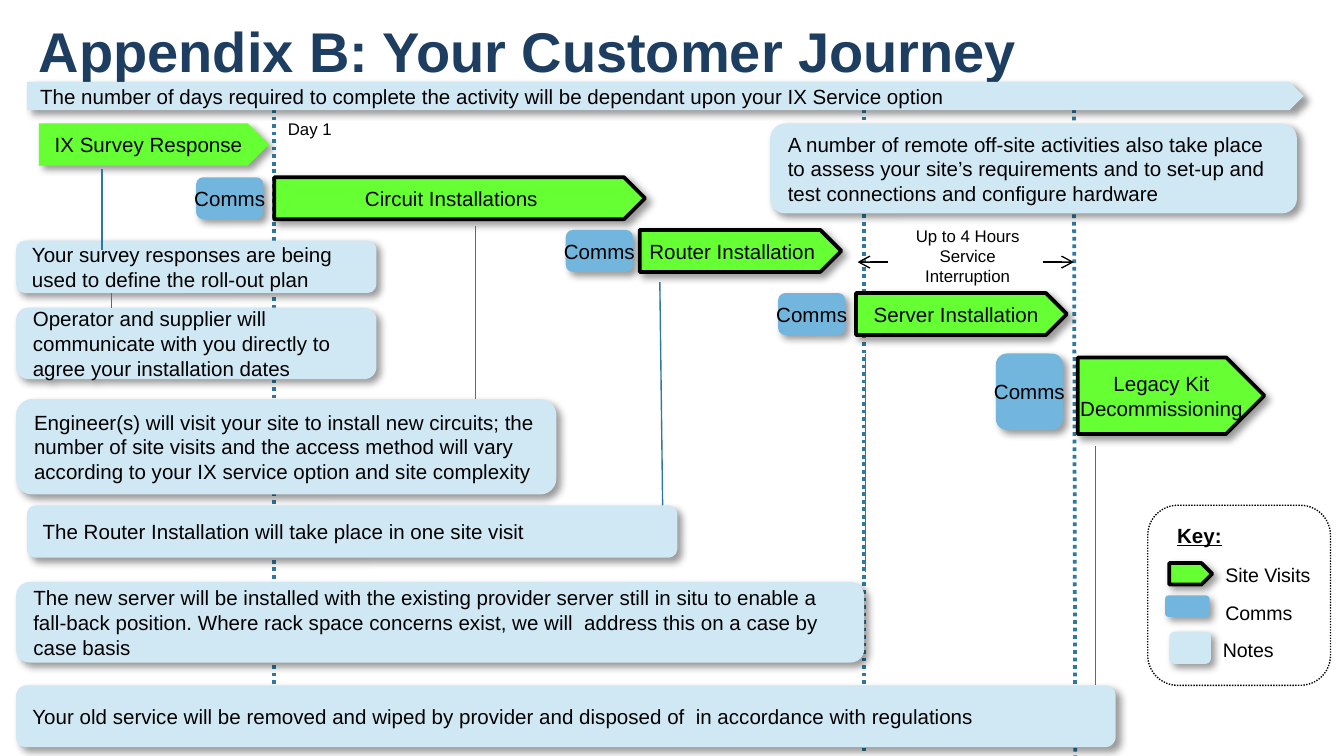
from lxml.etree import SubElement
from pptx import Presentation
from pptx.dml.color import RGBColor
from pptx.enum.dml import MSO_LINE
from pptx.enum.shapes import MSO_CONNECTOR, MSO_SHAPE
from pptx.enum.text import MSO_ANCHOR, MSO_AUTO_SIZE, PP_ALIGN
from pptx.oxml.ns import qn
from pptx.util import Pt

FONT = "Arial"
COLORS = {
    "title": "1D3E61",
    "text": "000000",
    "outline": "000000",
    "shadow": "000000",
    "visit": "66FF33",
    "comms": "73B6DD",
    "note": "D0E7F4",
    "link": "2F799E",
}
PLATE, ROUND = MSO_SHAPE.PENTAGON, MSO_SHAPE.ROUNDED_RECTANGLE
SLIDE_H = 405
BANNER_BOTTOM = 58.5

# (text, left, top, width, height, comms left, comms top)
VISITS = [
    ("Circuit Installations ", 146.9, 95, 198.7, 22.5, 105.1, 95),
    ("Router Installation ", 342.7, 123.2, 108, 22.5, 303.1, 123.2),
    ("Server Installation", 458.6, 157, 113, 22.5, 416.9, 157),
    ("Legacy Kit\nDecommissioning", 577.4, 191.5, 100, 41, 533.5, 189.4),
]
# (text, left, top, width, height)
NOTES = [
    ("Your survey responses are being used to define the roll-out plan",
     8.64, 128.9, 193, 28.1),
    ("Operator and supplier will communicate with you directly to agree your "
     "installation dates", 8.64, 164.9, 193, 38.2),
    ("Engineer(s) will visit your site to install new circuits; the number of "
     "site visits and the access method will vary according to your IX service "
     "option and site complexity", 8.64, 213.8, 289.4, 51.1),
    ("The Router Installation will take place in one site visit",
     14.4, 270.7, 348.5, 28.1),
    ("The new server will be installed with the existing provider server still "
     "in situ to enable a fall-back position. Where rack space concerns exist, "
     "we will  address this on a case by case basis", 8.64, 311.8, 454.3, 43.2),
    ("Your old service will be removed and wiped by provider and disposed of  in "
     "accordance with regulations", 8.64, 367.2, 589, 33.1),
    ("A number of remote off-site activities also take place to assess your "
     "site’s requirements and to set-up and test connections and configure "
     "hardware", 412.6, 66.2, 282.2, 48.2),
]
# (x1, y1, x2, y2)
MILESTONES = [
    (146.9, BANNER_BOTTOM, 146.9, 400.3),
    (463, BANNER_BOTTOM, 463, 402.5),
    (575.3, BANNER_BOTTOM, 576, SLIDE_H),
]
LINKS = [
    (54.7, 90.7, 54.7, 133.9),
    (59.8, 157, 59.8, 164.9),
    (254.9, 121, 254.9, 213.8),
    (353.5, 151.2, 355, 270.7),
    (463.7, 189.4, 463.7, 306.7),
    (586.8, 239, 586.8, 367.2),
]
# (text, label left, label top, label width, preset, fill, outlined, swatch box)
KEY = [
    ("Site Visits", 649.4, 298.1, 63.4, PLATE, "visit", True, (626.4, 301.7, 23, 11.5)),
    ("Comms", 649.4, 318.2, 51.1, ROUND, "comms", False, (624.2, 319, 23.8, 11.5)),
    ("Notes", 648, 338.4, 42.5, ROUND, "note", False, (626.4, 338.4, 22.3, 17.3)),
]


def rgb(name):
    return RGBColor.from_string(COLORS[name])


def write(tf, text, size=11, color="text", bold=False, underline=False,
          align=PP_ALIGN.LEFT):
    for i, line in enumerate(text.split("\n")):
        p = tf.paragraphs[0] if i == 0 else tf.add_paragraph()
        p.alignment = align
        r = p.add_run()
        r.text = line
        r.font.name, r.font.size = FONT, Pt(size)
        r.font.bold, r.font.underline = bold, underline
        r.font.color.rgb = rgb(color)


def add_shadow(sp):
    sp.shadow.inherit = False
    effects = sp._element.spPr.find(qn("a:effectLst"))
    outer = SubElement(effects, qn("a:outerShdw"), blurRad=str(Pt(4)),
                       dist=str(Pt(3)), dir=str(45 * 60000), algn="tl",
                       rotWithShape="0")
    color = SubElement(outer, qn("a:srgbClr"), val=COLORS["shadow"])
    SubElement(color, qn("a:alpha"), val="40000")


def add_block(s, preset, box, fill, text="", outlined=False, wrap=False,
              align=PP_ALIGN.CENTER):
    sp = s.shapes.add_shape(preset, *map(Pt, box))
    sp.fill.solid()
    sp.fill.fore_color.rgb = rgb(fill)
    if outlined:
        sp.line.color.rgb = rgb("outline")
        sp.line.width = Pt(2)
    else:
        sp.line.fill.background()
    add_shadow(sp)
    if text:
        tf = sp.text_frame
        tf.word_wrap = wrap
        tf.vertical_anchor = MSO_ANCHOR.MIDDLE
        write(tf, text, align=align)


def add_note(s, preset, box, text):
    add_block(s, preset, box, "note", text, wrap=True, align=PP_ALIGN.LEFT)


def add_label(s, box, text, wrap=False, **fmt):
    tf = s.shapes.add_textbox(*map(Pt, box)).text_frame
    tf.word_wrap = wrap
    tf.auto_size = MSO_AUTO_SIZE.SHAPE_TO_FIT_TEXT
    write(tf, text, **fmt)


def add_line(s, ends, color="link", width=0.75, dotted=False, arrow=False):
    cx = s.shapes.add_connector(MSO_CONNECTOR.STRAIGHT, *map(Pt, ends))
    cx.line.color.rgb = rgb(color)
    cx.line.width = Pt(width)
    if dotted:
        cx.line.dash_style = MSO_LINE.ROUND_DOT
    if arrow:
        SubElement(cx.line._get_or_add_ln(), qn("a:tailEnd"), type="arrow")
    SubElement(cx._element.spPr, qn("a:effectLst"))


def add_title(s, text):
    sp = s.shapes.title
    sp.left, sp.top, sp.width, sp.height = map(Pt, (20.9, 0, 684, 53.3))
    tf = sp.text_frame
    tf.margin_left = tf.margin_right = tf.margin_top = tf.margin_bottom = 0
    tf.vertical_anchor = MSO_ANCHOR.MIDDLE
    write(tf, text, size=30, color="title", bold=True)


def add_key(s):
    frame = s.shapes.add_shape(ROUND, *map(Pt, (614.9, 270.7, 97.9, 96.5)))
    frame.shadow.inherit = False
    frame.fill.background()
    frame.line.color.rgb = rgb("outline")
    frame.line.width = Pt(0.75)
    frame.line.dash_style = MSO_LINE.ROUND_DOT
    add_label(s, (623.5, 276.5, 38.9, 20.9), "Key:", bold=True, underline=True)
    for text, x, y, w, preset, fill, outlined, swatch in KEY:
        add_block(s, preset, swatch, fill, outlined=outlined)
        add_label(s, (x, y, w, 20.5), text, size=10.5)


def main():
    prs = Presentation()
    prs.slide_width, prs.slide_height = Pt(720), Pt(SLIDE_H)
    s = prs.slides.add_slide(prs.slide_layouts[5])
    add_title(s, "Appendix B: Your Customer Journey")

    # Milestone lines behind everything else
    for ends in MILESTONES:
        add_line(s, ends, width=2, dotted=True)

    # Banner and first step
    add_note(s, PLATE, (14.4, 43.9, 684, 15.1),
             "The number of days required to complete the activity will be "
             "dependant upon your IX Service option")
    add_block(s, PLATE, (20.9, 66.2, 123.1, 22.5), "visit", "IX Survey Response")
    add_label(s, (144.7, 59.8, 42.5, 18), "Day 1", wrap=True, size=9,
              align=PP_ALIGN.CENTER)

    # Site visits, each with its comms block
    for text, x, y, w, h, comms_x, comms_y in VISITS:
        add_block(s, PLATE, (x, y, w, h), "visit", text, outlined=True)
        add_block(s, ROUND, (comms_x, comms_y, 36, h), "comms", "Comms")

    # Service interruption
    add_label(s, (478.8, 117.4, 79.2, 40.3), "Up to 4 Hours Service Interruption",
              wrap=True, size=9, align=PP_ALIGN.CENTER)
    for start, end in ((475.9, 459.4), (558.7, 575.3)):
        add_line(s, (start, 140.4, end, 140.4), color="outline", arrow=True)

    # Notes and the lines that lead to them
    for text, *box in NOTES:
        add_note(s, ROUND, box, text)
    for ends in LINKS:
        add_line(s, ends)

    add_key(s)
    prs.save("out.pptx")


if __name__ == "__main__":
    main()
